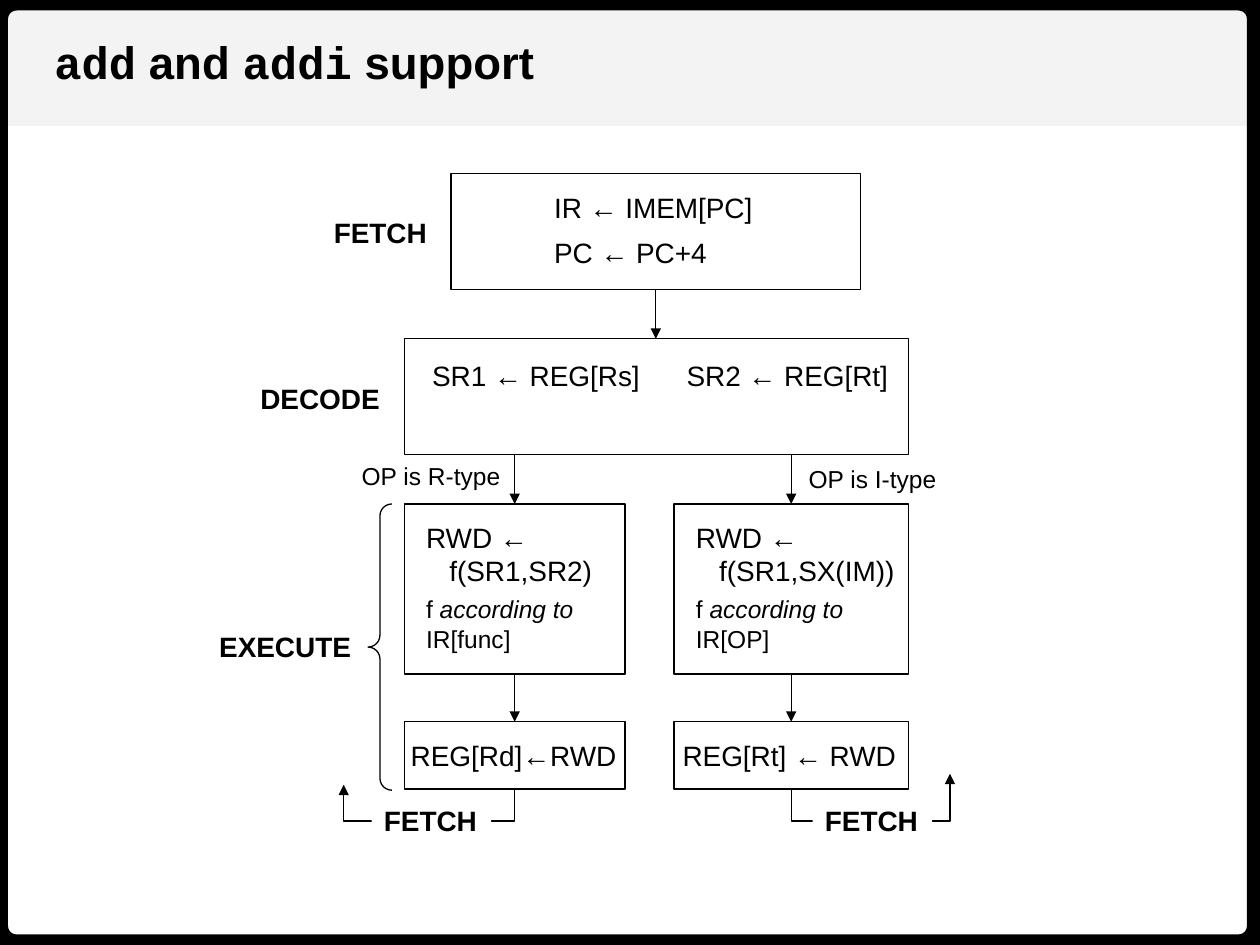
from lxml import etree
from pptx import Presentation
from pptx.dml.color import RGBColor
from pptx.enum.shapes import MSO_CONNECTOR, MSO_SHAPE
from pptx.enum.text import MSO_ANCHOR, MSO_AUTO_SIZE, PP_ALIGN
from pptx.oxml.ns import qn
from pptx.util import Cm, Pt

BLACK = RGBColor(0, 0, 0)
WHITE = RGBColor(255, 255, 255)
PALE = RGBColor(0xF3, 0xF3, 0xF3)
RECT, ROUND, BRACE = MSO_SHAPE.RECTANGLE, MSO_SHAPE.ROUNDED_RECTANGLE, MSO_SHAPE.LEFT_BRACE
STRAIGHT, ELBOW = MSO_CONNECTOR.STRAIGHT, MSO_CONNECTOR.ELBOW
TOP, LEFT, GROW = MSO_ANCHOR.TOP, PP_ALIGN.LEFT, MSO_AUTO_SIZE.SHAPE_TO_FIT_TEXT


class Chart:
    """Flow chart slide with one line and text style."""

    def __init__(self, slide):
        self.slide = slide
        self.shapes = slide.shapes
        self.font, self.code = "Arial", "Courier New"
        self.thin = 0.75

    def style(self, run, size, bold=False, italic=False, font=None):
        run.font.name = font or self.font
        run.font.size = Pt(size)
        run.font.bold, run.font.italic = bold, italic
        run.font.color.rgb = BLACK

    def title(self, parts, x, y, w, h):
        head = self.shapes.title
        head.left, head.top, head.width, head.height = Cm(x), Cm(y), Cm(w), Cm(h)
        frame = head.text_frame
        frame.word_wrap, frame.vertical_anchor = False, TOP
        para = frame.paragraphs[0]
        para.alignment = LEFT
        for text, font in parts:
            run = para.add_run()
            run.text = text
            self.style(run, 26, True, font=font)
        head.element.getparent().append(head.element)

    def box(self, x, y, w, h, kind=RECT, fill=None, line=None, adjust=()):
        shape = self.shapes.add_shape(kind, Cm(x), Cm(y), Cm(w), Cm(h))
        shape.shadow.inherit = False
        if fill is None:
            shape.fill.background()
        else:
            shape.fill.solid()
            shape.fill.fore_color.rgb = fill
        if line:
            shape.line.color.rgb = BLACK
            shape.line.width = Pt(line)
        else:
            shape.line.fill.background()
        for i, value in enumerate(adjust):
            shape.adjustments[i] = value

    def step(self, x, y, w, h):
        self.box(x, y, w, h, line=self.thin)

    def text(self, words, x, y, w, h=0.94, size=16, bold=False, fill=None):
        label = self.shapes.add_textbox(Cm(x), Cm(y), Cm(w), Cm(h))
        if fill is not None:
            label.fill.solid()
            label.fill.fore_color.rgb = fill
        frame = label.text_frame
        frame.text = words
        frame.word_wrap, frame.auto_size = False, GROW
        for para in frame.paragraphs:
            for run in para.runs:
                self.style(run, size, bold)
        return frame

    def rule(self, call, x, y, w):
        frame = self.text("RWD ←\n" + call, x, y, w, 1.63)
        frame.paragraphs[1]._p.get_or_add_pPr().set("marL", str(Cm(0.47)))

    def note(self, field, x, y, w):
        frame = self.text("f\n" + field, x, y, w, 1.45, 14)
        run = frame.paragraphs[0].add_run()
        run.text = " according to"
        self.style(run, 14, italic=True)

    def ink(self, link):
        link.line.color.rgb = BLACK
        link.line.width = Pt(self.thin)
        etree.SubElement(link.line._get_or_add_ln(), qn("a:tailEnd"), type="triangle")
        etree.SubElement(link._element.spPr, qn("a:effectLst"))

    def arrow(self, x, y, end):
        self.ink(self.shapes.add_connector(STRAIGHT, Cm(x), Cm(y), Cm(x), Cm(end)))

    def loop(self, x, y, tox, toy, drop):
        w, h = y - toy, abs(tox - x)
        left, top = (x + tox - w) / 2, (y + toy - h) / 2
        link = self.shapes.add_connector(ELBOW, Cm(left), Cm(top), Cm(left + w), Cm(top + h))
        props = link._element.spPr
        turn = props.find(qn("a:xfrm"))
        turn.set("rot", "5400000")
        turn.set("flipH", "1")
        if tox > x:
            turn.set("flipV", "1")
        guides = props.find(qn("a:prstGeom")).get_or_add_avLst()
        etree.SubElement(guides, qn("a:gd"), name="adj1", fmla=f"val {round(-drop / w * 100000)}")
        self.ink(link)


def main():
    deck = Presentation()
    deck.slide_width, deck.slide_height = Cm(25.4), Cm(19.05)
    chart = Chart(deck.slides.add_slide(deck.slide_layouts[5]))
    chart.box(0, 0, 25.4, 2.54, fill=PALE)
    chart.box(-0.05, 0, 25.4, 19.05, ROUND, line=12, adjust=[0.02])
    parts = [("add", chart.code), (" and ", chart.font), ("addi", chart.code), (" support", chart.font)]
    chart.title(parts, 0.84, 0.56, 10.29, 1.37)

    for words, x, y, w in [("FETCH", 6.48, 4.22, 2.41), ("DECODE", 5, 7.57, 2.95),
                           ("EXECUTE", 4.17, 12.57, 3.2)]:
        chart.text(words, x, y, w, bold=True)
    chart.box(7.42, 10.16, 0.48, 5.77, BRACE, line=chart.thin, adjust=[0.5, 0.5])

    chart.step(9.09, 3.5, 8.26, 2.34)
    chart.text("IR ← IMEM[PC]", 10.92, 3.71, 4.57)
    chart.text("PC ← PC+4", 10.92, 4.62, 3.63)
    chart.arrow(13.22, 5.84, 6.83)
    chart.step(8.15, 6.83, 10.16, 2.34)
    chart.text("SR1 ← REG[Rs]", 8.46, 7.11, 4.75)
    chart.text("SR2 ← REG[Rt]", 13.59, 7.11, 4.62)

    chart.text("OP is R-type", 7.04, 9.17, 3.33, 0.86, 14)
    chart.text("OP is I-type", 16.05, 9.22, 3.1, 0.86, 14)
    chart.text("REG[Rd]←RWD", 8.03, 14.76, 4.7)
    chart.text("REG[Rt] ← RWD", 13.51, 14.76, 4.88)

    paths = [
        (8.15, 4.45, "f(SR1,SR2)", 3.91, "IR[func]", (6.93, 15.82), 7.49),
        (13.59, 4.72, "f(SR1,SX(IM))", 4.57, "IR[OP]", (19.15, 15.6), 16.38),
    ]
    for x, w, call, wide, field, end, back in paths:
        mid = x + w / 2
        chart.step(x, 10.16, w, 3.43)
        chart.rule(call, x + 0.19, 10.36, wide)
        chart.note(field, x + 0.19, 11.86, 3.51)
        chart.step(x, 14.55, w, 1.36)
        chart.arrow(mid, 9.17, 10.16)
        chart.arrow(mid, 13.59, 14.55)
        chart.loop(mid, 15.91, *end, 0.64)
        chart.text("FETCH", back, 16.08, 2.41, bold=True, fill=WHITE)
    deck.save("out.pptx")


if __name__ == "__main__":
    main()
